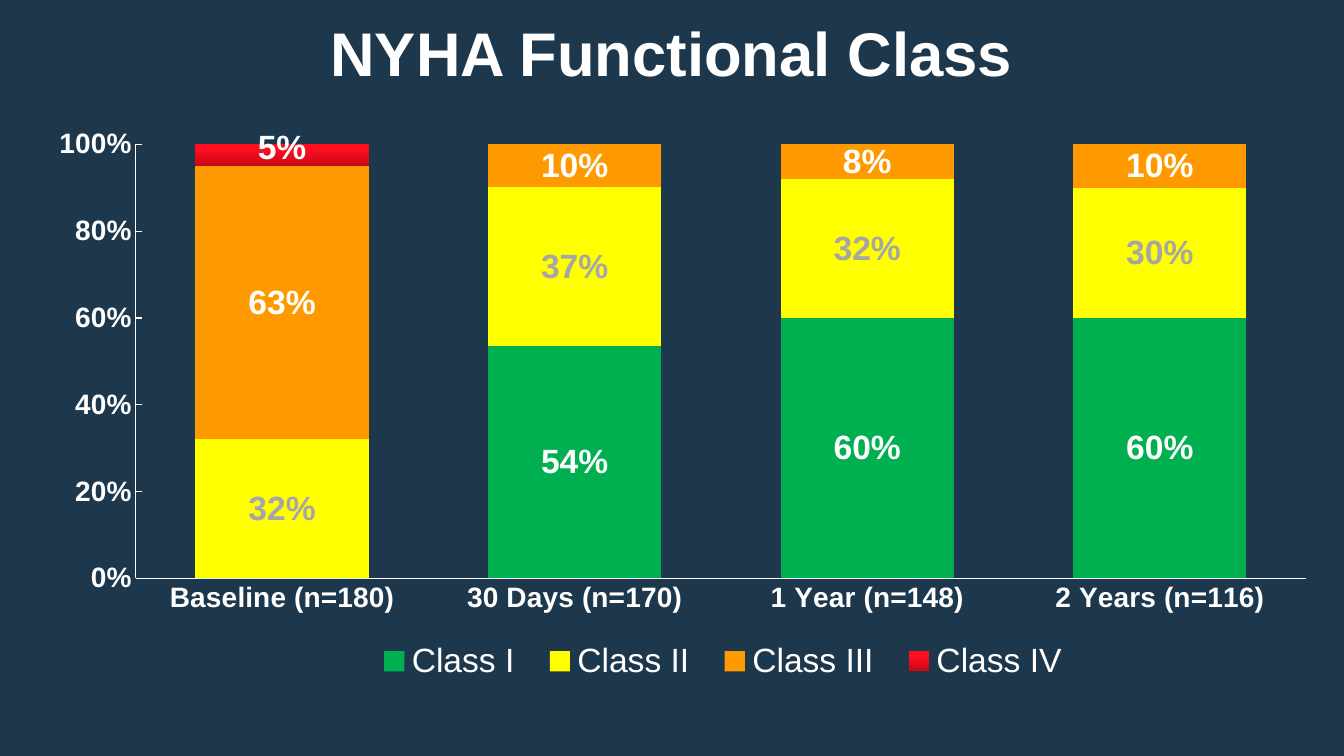
from dataclasses import dataclass

from lxml.etree import SubElement
from pptx import Presentation
from pptx.chart.data import CategoryChartData
from pptx.dml.color import RGBColor
from pptx.enum.chart import XL_CHART_TYPE, XL_LABEL_POSITION, XL_LEGEND_POSITION, XL_TICK_MARK
from pptx.enum.text import MSO_ANCHOR, PP_ALIGN
from pptx.oxml import parse_xml
from pptx.oxml.ns import nsdecls, qn
from pptx.util import Inches, Pt


@dataclass(frozen=True)
class Theme:
    """Colours, font and type sizes of the slide."""
    font: str = "Arial"
    background: str = "1D384C"
    text: str = "FFFFFF"
    muted: str = "A6A6A6"
    green: str = "00B050"
    yellow: str = "FFFF00"
    orange: str = "FF9900"
    reds: tuple = ("C70916", "FF0E20")
    title_size: int = 44
    label_size: int = 24
    axis_size: int = 20


THEME = Theme()
NONZERO_PERCENT = "0%;;"
VISITS = ("Baseline (n=180)", "30 Days (n=170)", "1 Year (n=148)", "2 Years (n=116)")
CLASSES = (
    ("Class I", (0, 0.54, 0.6, 0.6), THEME.green, THEME.text),
    ("Class II", (0.32, 0.37, 0.32, 0.3), THEME.yellow, THEME.muted),
    ("Class III", (0.63, 0.1, 0.08, 0.1), THEME.orange, THEME.text),
    ("Class IV", (0.05, 0, 0, 0), THEME.reds, THEME.text),
)


def style_font(font, size, color=THEME.text, bold=True):
    """Apply the slide's typeface with the given size, colour and weight."""
    font.name, font.size, font.bold = THEME.font, Pt(size), bold
    font.color.rgb = RGBColor.from_string(color)


def set_title(s, text):
    """Place and format the title placeholder."""
    sp = s.shapes.title
    sp.left, sp.top, sp.width, sp.height = Inches(1), Inches(0.1), Inches(11.33), Inches(0.83)
    tf = sp.text_frame
    tf.text = text
    tf.vertical_anchor = MSO_ANCHOR.MIDDLE
    tf.margin_left = tf.margin_top = tf.margin_right = tf.margin_bottom = 0
    p = tf.paragraphs[0]
    p.alignment = PP_ALIGN.CENTER
    style_font(p.font, THEME.title_size)


def set_layout(element, before, settings):
    """Give a chart part a manual layout in fractions of the chart."""
    for old in element.findall(qn("c:layout")):
        element.remove(old)
    layout = parse_xml(f"<c:layout {nsdecls('c')}/>")
    manual = SubElement(layout, qn("c:manualLayout"))
    for tag, value in settings.items():
        SubElement(manual, qn(f"c:{tag}")).set("val", str(value))
    element.find(qn(before)).addprevious(layout)


def edge_box(x, y, w, h):
    """Return layout settings for a box measured from the chart's edges."""
    return {"xMode": "edge", "yMode": "edge", "x": x, "y": y, "w": w, "h": h}


def fill_series(fill, color):
    """Fill a series with one colour or a bottom-to-top gradient."""
    if isinstance(color, str):
        fill.solid()
        fill.fore_color.rgb = RGBColor.from_string(color)
        return
    fill.gradient()
    fill.gradient_angle = 90
    for stop, position, rgb in zip(fill.gradient_stops, (0, 0.8), color):
        stop.position = position
        stop.color.rgb = RGBColor.from_string(rgb)


def style_series(series, color, label_color):
    """Colour a series and label its non-zero values as percentages."""
    fill_series(series.format.fill, color)
    series.invert_if_negative = False
    labels = series.data_labels
    labels.show_value = True
    labels.number_format, labels.number_format_is_linked = NONZERO_PERCENT, False
    labels.position = XL_LABEL_POSITION.CENTER
    style_font(labels.font, THEME.label_size, label_color)


def shift_first_label(series, dx, dy):
    """Move the first label of a series away from its centred place."""
    label = series.points[0].data_label
    style_font(label.font, THEME.label_size)
    label.position = XL_LABEL_POSITION.CENTER
    element = series.data_labels.element if hasattr(series.data_labels, "element") else None
    if element is None:
        element = series.format.element if hasattr(series.format, "element") else None
    return element, dx, dy


def style_axis(axis, tick):
    """Give an axis a thin line, its tick marks and bold labels."""
    axis.has_major_gridlines = False
    axis.major_tick_mark, axis.minor_tick_mark = tick, XL_TICK_MARK.NONE
    axis.format.line.width = Pt(0.75)
    axis.format.line.color.rgb = RGBColor.from_string(THEME.text)
    style_font(axis.tick_labels.font, THEME.axis_size)


def add_class_chart(s):
    """Add the stacked percentage chart behind the title."""
    data = CategoryChartData(number_format=NONZERO_PERCENT)
    data.categories = VISITS
    for name, values, _, _ in CLASSES:
        data.add_series(name, values)
    frame = s.shapes.add_chart(XL_CHART_TYPE.COLUMN_STACKED_100, Inches(0.1), Inches(0.1),
                               Inches(12.86), Inches(6.91), data)
    s.shapes.title.element.addprevious(frame.element)
    chart = frame.chart
    chart.has_title = False
    style_font(chart.font, THEME.axis_size)
    space = chart.element
    space.find(qn("c:chart")).addnext(parse_xml(
        f"<c:spPr {nsdecls('c', 'a')}><a:noFill/><a:ln><a:noFill/></a:ln></c:spPr>"))

    plot = chart.plots[0]
    plot.gap_width, plot.overlap, plot.vary_by_categories = 69, 100, False
    for series, (_, _, color, label_color) in zip(plot.series, CLASSES):
        style_series(series, color, label_color)
    shift_first_label(plot.series[3], 0, -0.01)
    set_layout(space.find(".//" + qn("c:dLbl")), "c:spPr" if space.find(
        ".//" + qn("c:dLbl")).find(qn("c:spPr")) is not None else "c:txPr",
        {"x": 0, "y": -0.01})

    style_axis(chart.category_axis, XL_TICK_MARK.NONE)
    axis = chart.value_axis
    style_axis(axis, XL_TICK_MARK.INSIDE)
    axis.minimum_scale, axis.maximum_scale, axis.major_unit = 0, 1, 0.2
    axis.tick_labels.number_format, axis.tick_labels.number_format_is_linked = "0%", False

    chart.has_legend = True
    legend = chart.legend
    legend.position, legend.include_in_layout = XL_LEGEND_POSITION.BOTTOM, False
    style_font(legend.font, THEME.label_size, bold=False)
    set_layout(space.find(".//" + qn("c:legend")), "c:overlay", edge_box(0.27, 0.89, 0.56, 0.09))
    set_layout(space.find(".//" + qn("c:plotArea")), "c:barChart",
               {"layoutTarget": "inner", **edge_box(0.097, 0.193, 0.903, 0.623)})


def main():
    """Build the slide and save it."""
    prs = Presentation()
    prs.slide_width, prs.slide_height = Inches(13.33), Inches(7.5)
    s = prs.slides.add_slide(prs.slide_layouts[5])
    s.background.fill.solid()
    s.background.fill.fore_color.rgb = RGBColor.from_string(THEME.background)
    set_title(s, "NYHA Functional Class")
    add_class_chart(s)
    prs.save("out.pptx")


if __name__ == "__main__":
    main()
